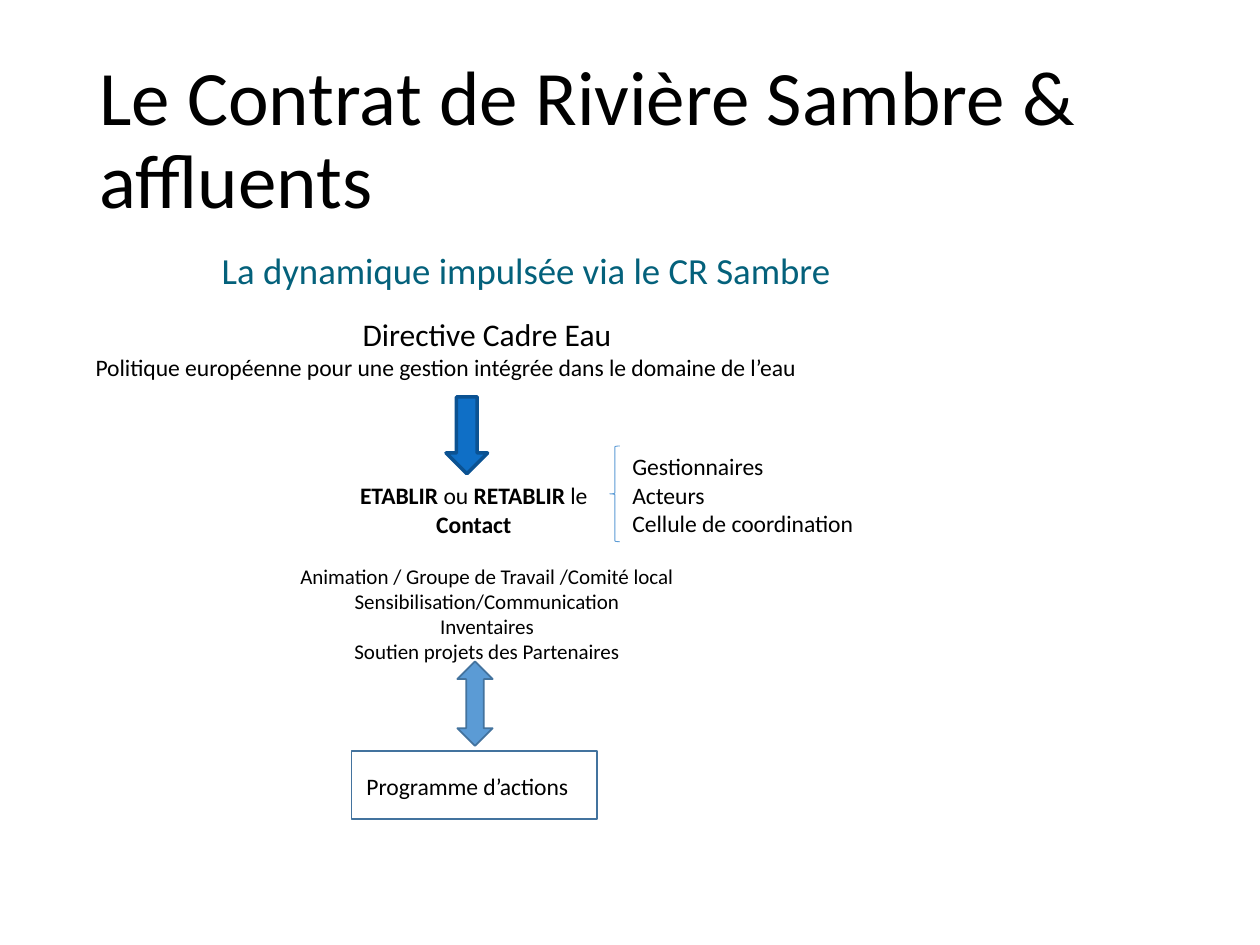
from pptx import Presentation
from pptx.dml.color import RGBColor
from pptx.enum.shapes import MSO_SHAPE
from pptx.enum.text import MSO_ANCHOR, PP_ALIGN
from pptx.util import Inches, Pt

LEFT, CENTER = PP_ALIGN.LEFT, PP_ALIGN.CENTER
TOP, MIDDLE = MSO_ANCHOR.TOP, MSO_ANCHOR.MIDDLE
DOWN_ARROW, UP_DOWN_ARROW = MSO_SHAPE.DOWN_ARROW, MSO_SHAPE.UP_DOWN_ARROW
RECTANGLE, LEFT_BRACE = MSO_SHAPE.RECTANGLE, MSO_SHAPE.LEFT_BRACE

BLACK = RGBColor(0x00, 0x00, 0x00)
TEAL = RGBColor(0x04, 0x61, 0x7B)
DEEP_BLUE = RGBColor(0x0F, 0x6F, 0xC6)
DEEP_BLUE_EDGE = RGBColor(0x0B, 0x52, 0x92)
SKY_BLUE = RGBColor(0x5B, 0x9B, 0xD5)
SKY_BLUE_EDGE = RGBColor(0x43, 0x73, 0x9E)

FONT = "Calibri"
BODY = 13.5

prs = Presentation()
prs.slide_width, prs.slide_height = Inches(10), Inches(7.5)
slide = prs.slides.add_slide(prs.slide_layouts[6])

# Grid of 100 columns by 75 rows
COL = prs.slide_width / 100
ROW = prs.slide_height / 75


def grid(col, row, cols, rows):
    return int(col * COL), int(row * ROW), int(cols * COL), int(rows * ROW)


def add_text(area, lines, size=BODY, color=BLACK, align=LEFT, anchor=TOP,
             spacing=1.0, inset=(0.1, 0.05)):
    """Each line is (text, overrides); text between asterisks is bold."""
    frame = slide.shapes.add_textbox(*grid(*area)).text_frame
    frame.word_wrap = True
    frame.vertical_anchor = anchor
    frame.margin_left = frame.margin_right = Inches(inset[0])
    frame.margin_top = frame.margin_bottom = Inches(inset[1])
    for i, (text, own) in enumerate(lines):
        paragraph = frame.add_paragraph() if i else frame.paragraphs[0]
        paragraph.alignment = own.get("align", align)
        paragraph.line_spacing = spacing
        for j, part in enumerate(text.split("*")):
            if part:
                run = paragraph.add_run()
                run.text = part
                run.font.name = FONT
                run.font.size = Pt(own.get("size", size))
                run.font.bold = j % 2 == 1
                run.font.color.rgb = color


# Title and subtitle
add_text((6.9, 4, 86.2, 14.5), [("Le Contrat de Rivière Sambre & affluents", {})],
         size=44, anchor=MIDDLE, spacing=0.9)
add_text((16.9, 19.3, 69, 4.3), [("La dynamique impulsée via le CR Sambre", {})],
         size=21, color=TEAL, inset=(0.07, 0.04))

# Steps of the process, from the directive to the programme
add_text((6.6, 24.5, 64.1, 6.3), [
    ("Directive Cadre Eau", {"size": 18, "align": CENTER}),
    ("Politique européenne pour une gestion intégrée dans le domaine de l’eau", {}),
])
add_text((26.4, 37.7, 22.4, 5.6), [("*ETABLIR* ou *RETABLIR* le *Contact*", {})],
         align=CENTER)
add_text((49.2, 35.4, 29.9, 7.8), [
    (who, {}) for who in ("Gestionnaires", "Acteurs", "Cellule de coordination")
])
add_text((20.2, 44.2, 36.9, 9.1), [
    (activity, {}) for activity in (
        "Animation / Groupe de Travail /Comité local",
        "Sensibilisation/Communication",
        "Inventaires",
        "Soutien projets des Partenaires",
    )
], size=12, align=CENTER)
add_text((28.1, 60.8, 19.5, 3.3), [("Programme d’actions", {})])

# Arrows between steps, frame of the programme, brace of the contacts
for kind, area, fill, edge, width in (
    (DOWN_ARROW, (35.4, 31.5, 3.3, 6.1), DEEP_BLUE, DEEP_BLUE_EDGE, 2),
    (UP_DOWN_ARROW, (36.3, 52.5, 2.8, 6.7), SKY_BLUE, SKY_BLUE_EDGE, 1),
    (RECTANGLE, (27.9, 59.6, 19.5, 5.4), None, SKY_BLUE_EDGE, 1),
    (LEFT_BRACE, (48.4, 35.4, 0.8, 7.6), None, SKY_BLUE, 0.5),
):
    shape = slide.shapes.add_shape(kind, *grid(*area))
    shape.shadow.inherit = False
    if fill is None:
        shape.fill.background()
    else:
        shape.fill.solid()
        shape.fill.fore_color.rgb = fill
    shape.line.color.rgb = edge
    shape.line.width = Pt(width)

prs.save("out.pptx")
